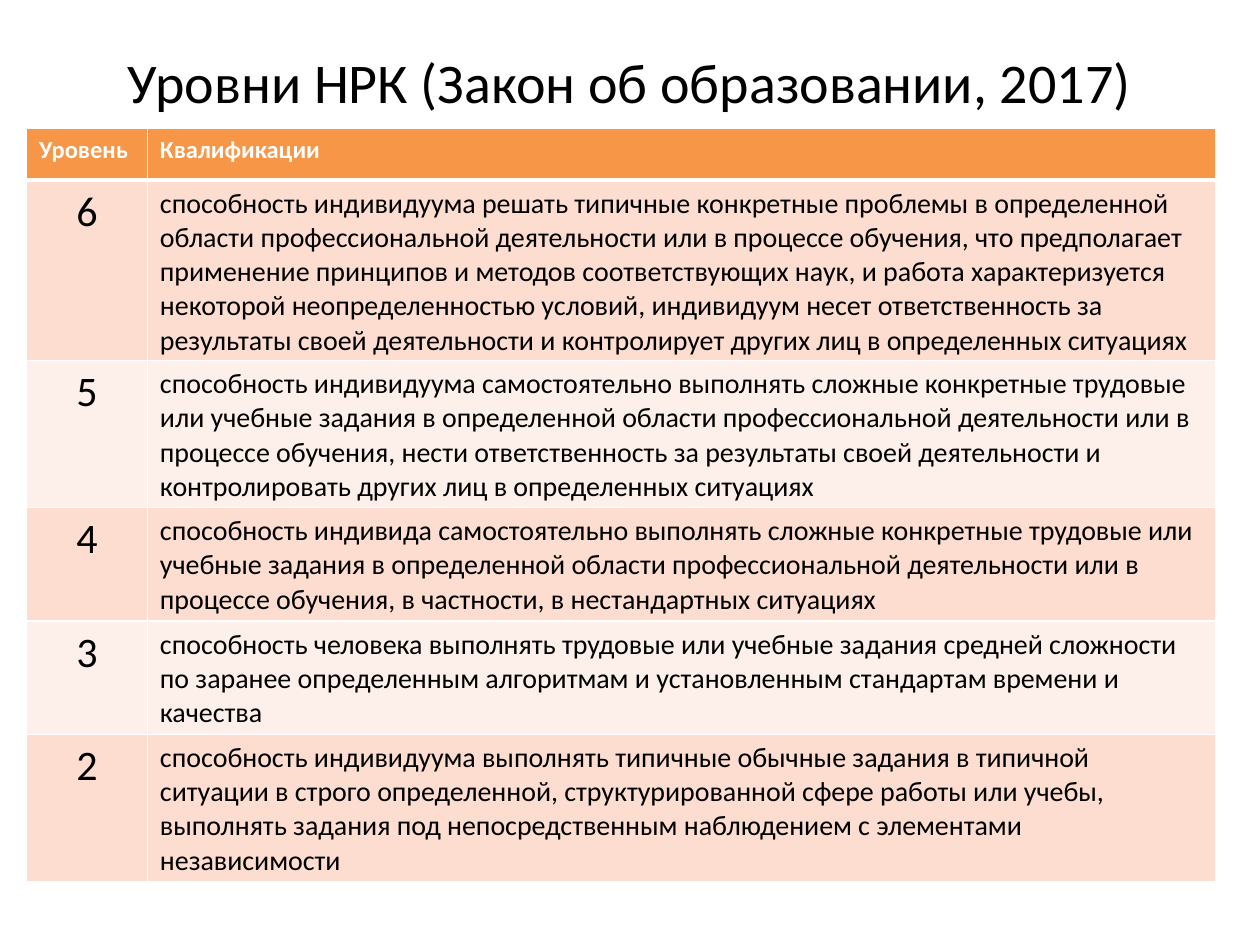
from lxml.etree import SubElement
from pptx import Presentation
from pptx.dml.color import RGBColor
from pptx.enum.text import MSO_ANCHOR, PP_ALIGN
from pptx.oxml.ns import qn
from pptx.util import Inches, Pt

HEAD = ("Уровень", "Квалификации")
LEVELS = [
    ("6", "способность индивидуума решать типичные конкретные проблемы в определенной "
          "области профессиональной деятельности или в процессе обучения, что предполагает "
          "применение принципов и методов соответствующих наук, и работа характеризуется "
          "некоторой неопределенностью условий, индивидуум несет ответственность за "
          "результаты своей деятельности и контролирует других лиц в определенных ситуациях"),
    ("5", "способность индивидуума самостоятельно выполнять сложные конкретные трудовые "
          "или учебные задания в определенной области профессиональной деятельности или в "
          "процессе обучения, нести ответственность за результаты своей деятельности и "
          "контролировать других лиц в определенных ситуациях"),
    ("4", "способность индивида самостоятельно выполнять сложные конкретные трудовые или "
          "учебные задания в определенной области профессиональной деятельности или в "
          "процессе обучения, в частности, в нестандартных ситуациях"),
    ("3", "способность человека выполнять трудовые или учебные задания средней сложности "
          "по заранее определенным алгоритмам и установленным стандартам времени и качества"),
    ("2", "способность индивидуума выполнять типичные обычные задания в типичной "
          "ситуации в строго определенной, структурированной сфере работы или учебы, "
          "выполнять задания под непосредственным наблюдением с элементами независимости"),
]


def color(code):
    return RGBColor.from_string(code)


def write(frame, text, size, ink="000000", bold=False, align=PP_ALIGN.LEFT):
    para = frame.paragraphs[0]
    para.alignment = align
    run = para.add_run()
    run.text = text
    run.font.name = "Calibri"
    run.font.size = Pt(size)
    run.font.bold = bold
    run.font.color.rgb = color(ink)


def border(cell, top, bottom):
    props = cell._tc.get_or_add_tcPr()
    for side, width in (("L", 1), ("R", 1), ("T", top), ("B", bottom)):
        line = SubElement(props, qn(f"a:ln{side}"), w=str(Pt(width)))
        fill = SubElement(line, qn("a:solidFill"))
        SubElement(fill, qn("a:srgbClr"), val="FFFFFF")


def paint(cell, code):
    cell.fill.solid()
    cell.fill.fore_color.rgb = color(code)


def title(slide, left, top, width, height):
    box = slide.shapes.add_textbox(Inches(left), Inches(top), Inches(width), Inches(height))
    frame = box.text_frame
    frame.word_wrap = True
    frame.vertical_anchor = MSO_ANCHOR.MIDDLE
    write(frame, "Уровни НРК (Закон об образовании, 2017)", 32, align=PP_ALIGN.CENTER)


def grid(slide, left, top, width, row, first):
    count = len(LEVELS) + 1
    table = slide.shapes.add_table(
        count, 2, Inches(left), Inches(top), Inches(width), Inches(row * count)).table
    table.columns[0].width = Inches(first)
    table.columns[1].width = Inches(width - first)
    for line in table.rows:
        line.height = Inches(row)
    for col, text in enumerate(HEAD):
        cell = table.cell(0, col)
        border(cell, 1, 3)
        paint(cell, "F79646")
        write(cell.text_frame, text, 14, "FFFFFF", True)
    styles = ((24, PP_ALIGN.CENTER), (16, PP_ALIGN.LEFT))
    for num, level in enumerate(LEVELS, 1):
        for col, (text, (size, align)) in enumerate(zip(level, styles)):
            cell = table.cell(num, col)
            border(cell, 3 if num == 1 else 1, 1)
            paint(cell, "FCDDCF" if num % 2 else "FDEFE9")
            write(cell.text_frame, text, size, align=align)


def main():
    deck = Presentation()
    deck.slide_width = Inches(10)
    deck.slide_height = Inches(7.5)
    slide = deck.slides.add_slide(deck.slide_layouts[6])
    title(slide, 0.5, 0.3, 9, 0.69)
    grid(slide, 0.21, 1.02, 9.44, 0.41, 0.96)
    deck.save("out.pptx")


if __name__ == "__main__":
    main()
